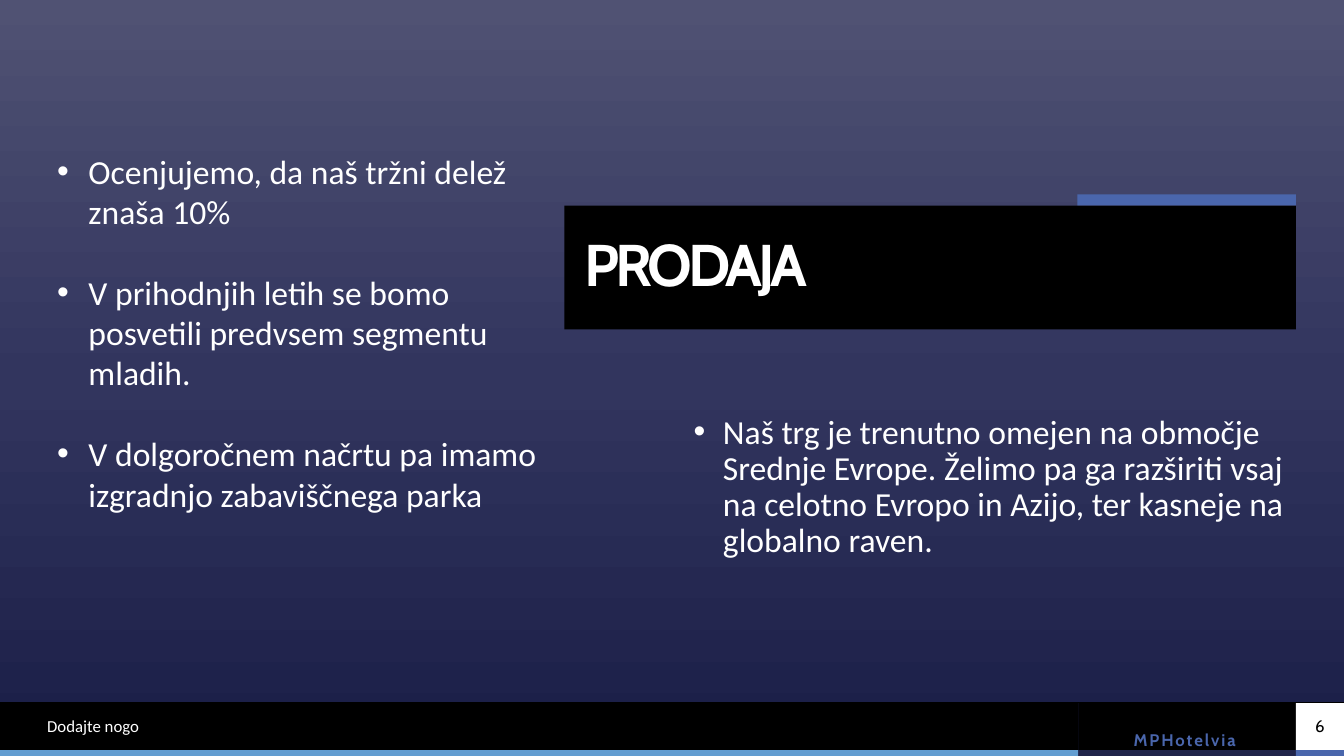
"""Build the sales slide with its two lists, title band and footer."""
from copy import deepcopy
from lxml.etree import SubElement
from pptx import Presentation
from pptx.dml.color import RGBColor as RGB
from pptx.enum.shapes import MSO_CONNECTOR as LINE, MSO_SHAPE as SHAPE
from pptx.enum.text import MSO_ANCHOR as ANCHOR, MSO_AUTO_SIZE as AUTO, PP_ALIGN as ALIGN
from pptx.oxml.ns import qn
from pptx.util import Cm, Pt

HUES = {
    "black": "000000", "white": "FFFFFF", "blue": "4A66AC", "sky": "629DD1",
    "navy": "20244A", "top": "505273", "mid": "32355E", "base": "1A1E47",
}


def add_bar(x, y, w, h, hue):
    bar = slide.shapes.add_shape(SHAPE.RECTANGLE, Cm(x), Cm(y), Cm(w), Cm(h))
    bar.shadow.inherit = False
    bar.fill.solid()
    bar.fill.fore_color.rgb = RGB.from_string(HUES[hue])
    bar.line.fill.background()
    return bar


def set_text(shape, lines, size, face="Calibri", hue="white", bold=False,
             align=ALIGN.LEFT, anchor=ANCHOR.MIDDLE, pads=(0, 0, 0, 0),
             lead=1.0, gap=0, dent=0, track=0):
    frame = shape.text_frame
    frame.text = "\n".join(lines)
    frame.word_wrap = True
    frame.auto_size = AUTO.NONE
    frame.vertical_anchor = anchor
    (frame.margin_left, frame.margin_top,
     frame.margin_right, frame.margin_bottom) = map(Cm, pads)
    for i, para in enumerate(frame.paragraphs):
        para.alignment = align
        para.line_spacing = lead
        para.space_before = Pt(gap if i else 0)
        para.space_after = Pt(0)
        props = para._p.get_or_add_pPr()
        if dent:
            props.set("marL", str(Cm(dent)))
            props.set("indent", str(-Cm(dent)))
            SubElement(props, qn("a:buFont"), typeface="Arial")
            SubElement(props, qn("a:buChar"), char="•")
        font = para.font
        font.name, font.size, font.bold = face, Pt(size), bold
        font.color.rgb = RGB.from_string(HUES[hue])
        if track:
            props.find(qn("a:defRPr")).set("spc", str(track))


deck = Presentation()
deck.slide_width, deck.slide_height = Cm(33.87), Cm(19.05)
slide = deck.slides.add_slide(deck.slide_layouts[3])

fill = slide.background.fill
fill.gradient()
fill.gradient_angle = 270
stops = slide.background.fill._fill._gradFill.find(qn("a:gsLst"))
stops.insert(1, deepcopy(stops[0]))
for stop, hue, place in zip(fill.gradient_stops, ("top", "mid", "base"), (0, 0.5, 1)):
    stop.color.rgb = RGB.from_string(HUES[hue])
    stop.position = place

title, left, right = slide.placeholders
spots = (
    (title, 14.22, 5.18, 18.44, 3.12),
    (left, 1.19, 3.66, 12.78, 10.52),
    (right, 17.48, 10.46, 15.19, 6.76),
)
for item, x, y, w, h in spots:
    item.left, item.top, item.width, item.height = Cm(x), Cm(y), Cm(w), Cm(h)

title.fill.solid()
title.fill.fore_color.rgb = RGB.from_string(HUES["black"])
set_text(title, ["PRODAJA"], 42, "Cabin", bold=True, pads=(0.51,) * 4,
         lead=0.9, track=-300)
set_text(left, [
    "Ocenjujemo, da naš tržni delež znaša 10%",
    "V prihodnjih letih se bomo posvetili predvsem segmentu mladih.",
    "V dolgoročnem načrtu pa imamo izgradnjo zabaviščnega parka",
], 24, anchor=ANCHOR.TOP, pads=(0.25, 0.13, 0.25, 0.13), gap=29, dent=0.79)
set_text(right, [
    "Naš trg je trenutno omejen na območje Srednje Evrope. Želimo pa ga "
    "razširiti vsaj na celotno Evropo in Azijo, ter kasneje na globalno raven.",
], 24, anchor=ANCHOR.TOP, lead=0.9, dent=0.74)

add_bar(27.15, 4.9, 5.51, 0.28, "blue")
for x, w, hue, strip in ((0, 27.18, "black", "sky"),
                         (27.18, 5.48, "black", "navy"),
                         (32.66, 1.21, "white", "blue")):
    box = add_bar(x, 17.7, w, 1.2, hue)
    add_bar(x, 18.9, w, 0.15, strip)
set_text(box, ["6"], 12, "Cabin", "black", align=ALIGN.CENTER)

rule = slide.shapes.add_connector(LINE.STRAIGHT, Cm(33.87), Cm(17.7), Cm(0), Cm(17.7))
rule.line.color.rgb = RGB.from_string(HUES["black"])
rule.line.width = Pt(0.5)
SubElement(rule._element.spPr, qn("a:effectLst"))

note = slide.shapes.add_textbox(Cm(1.19), Cm(17.88), Cm(15.72), Cm(0.81))
set_text(note, ["Dodajte nogo"], 12)
brand = slide.shapes.add_textbox(Cm(28.02), Cm(17.86), Cm(3.38), Cm(1.04))
set_text(brand, ["MPHotelvia"], 12, "Cabin", "blue", True, ALIGN.RIGHT,
         ANCHOR.BOTTOM, (0.25, 0.3, 0.25, 0), Pt(10), track=140)

deck.save("out.pptx")
